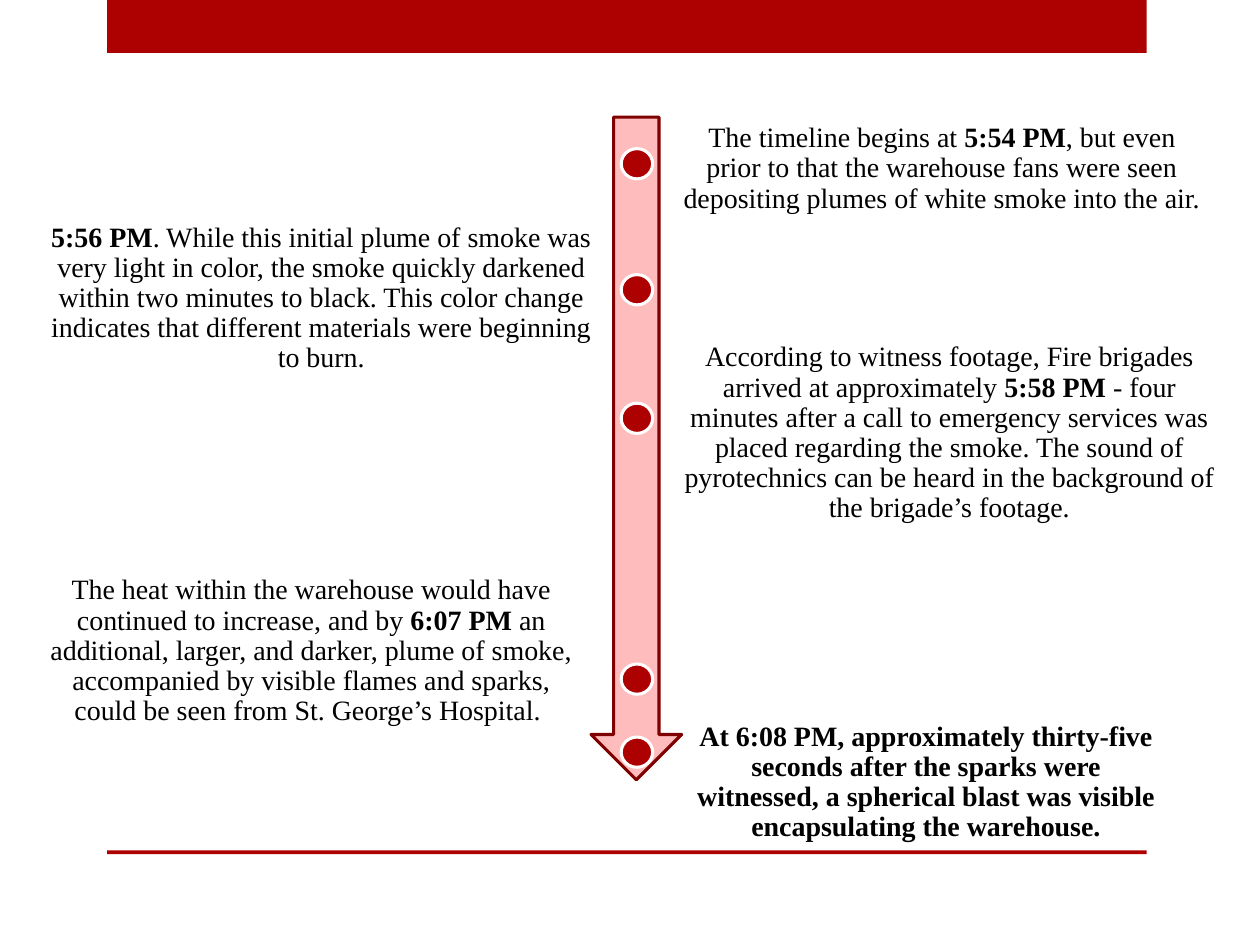
from pptx import Presentation
from pptx.dml.color import RGBColor
from pptx.enum.shapes import MSO_SHAPE
from pptx.enum.text import MSO_ANCHOR, PP_ALIGN
from pptx.util import Inches, Pt

RECT, ARROW, DOT = MSO_SHAPE.RECTANGLE, MSO_SHAPE.DOWN_ARROW, MSO_SHAPE.OVAL
TOP, MID = MSO_ANCHOR.TOP, PP_ALIGN.CENTER
COLS, ROWS = 100, 75
HUES = {"red": "AD0101", "dark": "800101", "pink": "FFBCBC",
        "white": "FFFFFF", "black": "000000"}
FRAME = {"word_wrap": True, "vertical_anchor": TOP,
         "margin_left": Inches(0.06), "margin_right": Inches(0.06),
         "margin_top": Inches(0.06), "margin_bottom": Inches(0.06)}
PARA = {"alignment": MID, "line_spacing": 0.9}
FONT = {"name": "Times New Roman", "size": Pt(16)}


def apply(item, values):
    for name, value in values.items():
        setattr(item, name, value)


class Deck:
    def __init__(self):
        self.prs = Presentation()
        self.prs.slide_width = Inches(10)
        self.prs.slide_height = Inches(7.5)
        self.slide = self.prs.slides.add_slide(self.prs.slide_layouts[6])

    def area(self, col, row, wide, high):
        x, y = self.prs.slide_width / COLS, self.prs.slide_height / ROWS
        return [round(n) for n in (col * x, row * y, wide * x, high * y)]

    def hue(self, name):
        return RGBColor.from_string(HUES[name])

    def shape(self, kind, place, fill, edge=None):
        item = self.slide.shapes.add_shape(kind, *self.area(*place))
        item.shadow.inherit = False
        item.fill.solid()
        item.fill.fore_color.rgb = self.hue(fill)
        if edge:
            item.line.color.rgb = self.hue(edge)
            item.line.width = Pt(1.75)
        else:
            item.line.fill.background()

    def note(self, place, parts):
        frame = self.slide.shapes.add_textbox(*self.area(*place)).text_frame
        apply(frame, FRAME)
        para = frame.paragraphs[0]
        apply(para, PARA)
        for text, bold in parts:
            run = para.add_run()
            run.text = text
            apply(run.font, {**FONT, "bold": bold})
            run.font.color.rgb = self.hue("black")


def main():
    deck = Deck()
    for row, high in ((0, 4.2), (67.5, 0.3)):
        deck.shape(RECT, (8.5, row, 82.5, high), "red")
    deck.shape(ARROW, (46.9, 9.3, 7.2, 52.6), "pink", "dark")

    events = [
        (11.8, (53.2, 9.2, 43.1), [
            ("The timeline begins at ", False), ("5:54 PM", True),
            (", but even prior to that the warehouse fans were seen "
             "depositing plumes of white smoke into the air.", False)]),
        (21.8, (2.5, 17.1, 46), [
            ("5:56 PM", True),
            (". While this initial plume of smoke was very light in color, "
             "the smoke quickly darkened within two minutes to black. This "
             "color change indicates that different materials were "
             "beginning to burn.", False)]),
        (32, (53.2, 26.6, 44.3), [
            ("According to witness footage, Fire brigades arrived at "
             "approximately ", False), ("5:58 PM ", True),
            ("- four minutes after a call to emergency services was placed "
             "regarding the smoke. The sound of pyrotechnics can be heard "
             "in the background of the brigade’s footage.", False)]),
        (52.7, (2.5, 45.1, 44.4), [
            ("The heat within the warehouse would have continued to "
             "increase, and by ", False), ("6:07 PM", True),
            (" an additional, larger, and darker, plume of smoke, "
             "accompanied by visible flames and sparks, could be seen from "
             "St. George’s Hospital. ", False)]),
        (58.5, (54.2, 56.7, 38.6), [
            ("At 6:08 PM, approximately thirty-five seconds after the "
             "sparks were witnessed, a spherical blast was visible "
             "encapsulating the warehouse.", True)]),
    ]
    for row, place, parts in events:
        deck.note((*place, 17.8), parts)
        deck.shape(DOT, (49.3, row, 2.5, 2.4), "red", "white")

    deck.prs.save("out.pptx")


if __name__ == "__main__":
    main()
